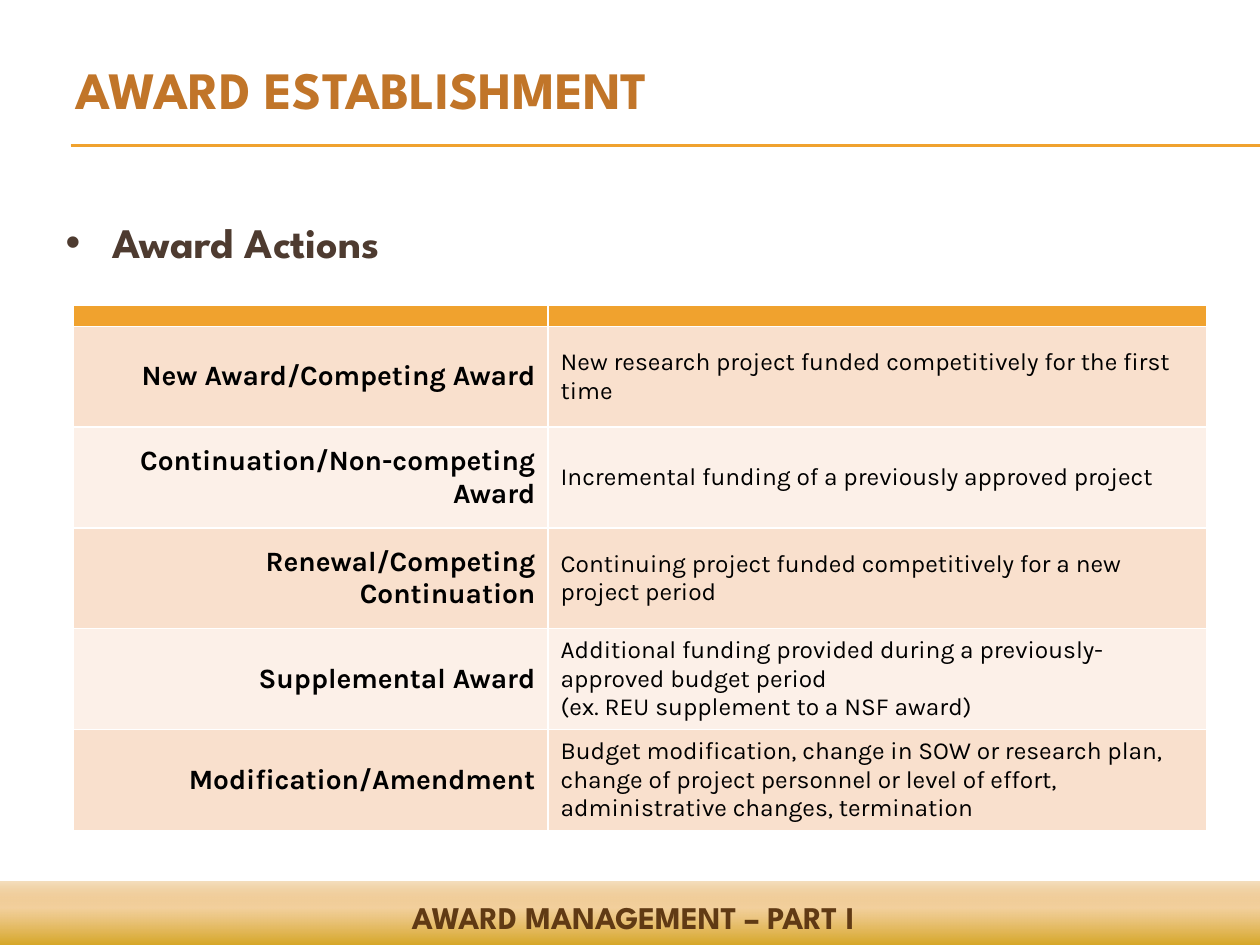
import lxml.etree
import pptx
import pptx.dml.color
import pptx.enum.shapes
import pptx.enum.text
import pptx.oxml.ns
import pptx.util

Inches = pptx.util.Inches
Pt = pptx.util.Pt
RGB = pptx.dml.color.RGBColor.from_string
qn = pptx.oxml.ns.qn
ALIGN = pptx.enum.text.PP_ALIGN
ANCHOR = pptx.enum.text.MSO_ANCHOR
FIT = pptx.enum.text.MSO_AUTO_SIZE

HEAD, TEXT = "League Spartan", "Karla"
theme = {
    "rule": "F0A22E",
    "bands": ["F9E0CD", "FCF0E8"],
    # position, colour, opacity in percent
    "fade": [(0, "CC9900", 100), (65, "EFC17E", 75), (100, "D68000", 25)],
    "title": {"name": HEAD, "size": Pt(30), "bold": True, "color": "C17529"},
    "body": {"name": HEAD, "size": Pt(24), "bold": True, "color": "4E3B30"},
    "foot": {"name": HEAD, "size": Pt(18), "bold": True, "color": "603A14"},
    "term": {"name": TEXT, "size": Pt(16), "bold": True, "color": "000000"},
    "note": {"name": TEXT, "size": Pt(14), "bold": False, "color": "000000"},
}


def write(frame, text, style, align, anchor):
    """Fill a text frame, one paragraph per line of text."""
    frame.text = text
    frame.word_wrap = True
    frame.vertical_anchor = anchor
    for para in frame.paragraphs:
        para.alignment = align
        para.space_before = Pt(0)
        for key, value in theme[style].items():
            if key == "color":
                para.font.color.rgb = RGB(value)
            else:
                setattr(para.font, key, value)


def place(shape, *box):
    for key, value in zip(("left", "top", "width", "height"), box):
        setattr(shape, key, Inches(value))


deck = pptx.Presentation()
deck.slide_width, deck.slide_height = Inches(10), Inches(7.5)
slide = deck.slides.add_slide(deck.slide_layouts[1])
shapes = slide.shapes

# Double rule under the title
for y in (1.15, 1.16):
    rule = shapes.add_connector(
        pptx.enum.shapes.MSO_CONNECTOR.STRAIGHT,
        Inches(0.56), Inches(y), Inches(10), Inches(y))
    rule.line.color.rgb = RGB(theme["rule"])
    rule.line.width = Pt(0.75)
    lxml.etree.SubElement(rule._element.spPr, qn("a:effectLst"))

# Footer band, fading upwards
band = shapes.add_shape(
    pptx.enum.shapes.MSO_SHAPE.RECTANGLE,
    Inches(-0.01), Inches(7), Inches(10.03), Inches(0.58))
band.shadow.inherit = False
band.line.fill.background()
band.fill.gradient()
band.fill.gradient_angle = 90
stops = band._element.spPr.find(qn("a:gradFill")).find(qn("a:gsLst"))
for stop in list(stops):
    stops.remove(stop)
for spot, color, alpha in theme["fade"]:
    stop = lxml.etree.SubElement(stops, qn("a:gs"), pos=str(spot * 1000))
    tone = lxml.etree.SubElement(stop, qn("a:srgbClr"), val=color)
    lxml.etree.SubElement(tone, qn("a:alpha"), val=str(alpha * 1000))

foot = shapes.add_textbox(Inches(0.15), Inches(7.08), Inches(9.75), Inches(0.4))
write(foot.text_frame, "AWARD MANAGEMENT – PART I", "foot", ALIGN.CENTER, ANCHOR.TOP)
foot.text_frame.auto_size = FIT.SHAPE_TO_FIT_TEXT

# Title and heading
title = shapes.title
place(title, 0.5, 0.3, 8.83, 0.7)
write(title.text_frame, "AWARD ESTABLISHMENT", "title", ALIGN.LEFT, ANCHOR.BOTTOM)
title.text_frame.auto_size = FIT.NONE

body = slide.placeholders[1]
place(body, 0.42, 1.67, 9.08, 5.33)
props = body.text_frame.paragraphs[0]._p.get_or_add_pPr()
props.set("marL", "0")
props.set("indent", "0")
lxml.etree.SubElement(props, qn("a:buNone"))
write(body.text_frame, "Award Actions", "body", ALIGN.LEFT, ANCHOR.TOP)
body.text_frame.auto_size = FIT.NONE

# Table of award actions
awards = [
    ("New Award/Competing Award",
     "New research project funded competitively for the first time"),
    ("Continuation/Non-competing Award",
     "Incremental funding of a previously approved project"),
    ("Renewal/Competing Continuation",
     "Continuing project funded competitively for a new project period"),
    ("Supplemental Award",
     "Additional funding provided during a previously-approved budget period\n"
     "(ex. REU supplement to a NSF award)"),
    ("Modification/Amendment",
     "Budget modification, change in SOW or research plan, change of project "
     "personnel or level of effort, administrative changes, termination"),
]
table = shapes.add_table(
    len(awards) + 1, 2, Inches(0.58), Inches(2.42), Inches(9), Inches(4.17)).table
for col, width in zip(table.columns, (3.77, 5.23)):
    col.width = Inches(width)
for row in table.rows:
    row.height = Inches(0.8)
table.rows[0].height = Inches(0.17)

for cell in table.rows[0].cells:
    cell.fill.solid()
    cell.fill.fore_color.rgb = RGB(theme["rule"])
    cell.margin_top = cell.margin_bottom = 0
    cell.text_frame.paragraphs[0].font.size = Pt(8)

looks = [("term", ALIGN.RIGHT), ("note", ALIGN.LEFT)]
for r, award in enumerate(awards):
    for c, (text, (style, align)) in enumerate(zip(award, looks)):
        cell = table.cell(r + 1, c)
        cell.fill.solid()
        cell.fill.fore_color.rgb = RGB(theme["bands"][r % 2])
        write(cell.text_frame, text, style, align, None)
        cell.vertical_anchor = ANCHOR.MIDDLE

deck.save("out.pptx")
